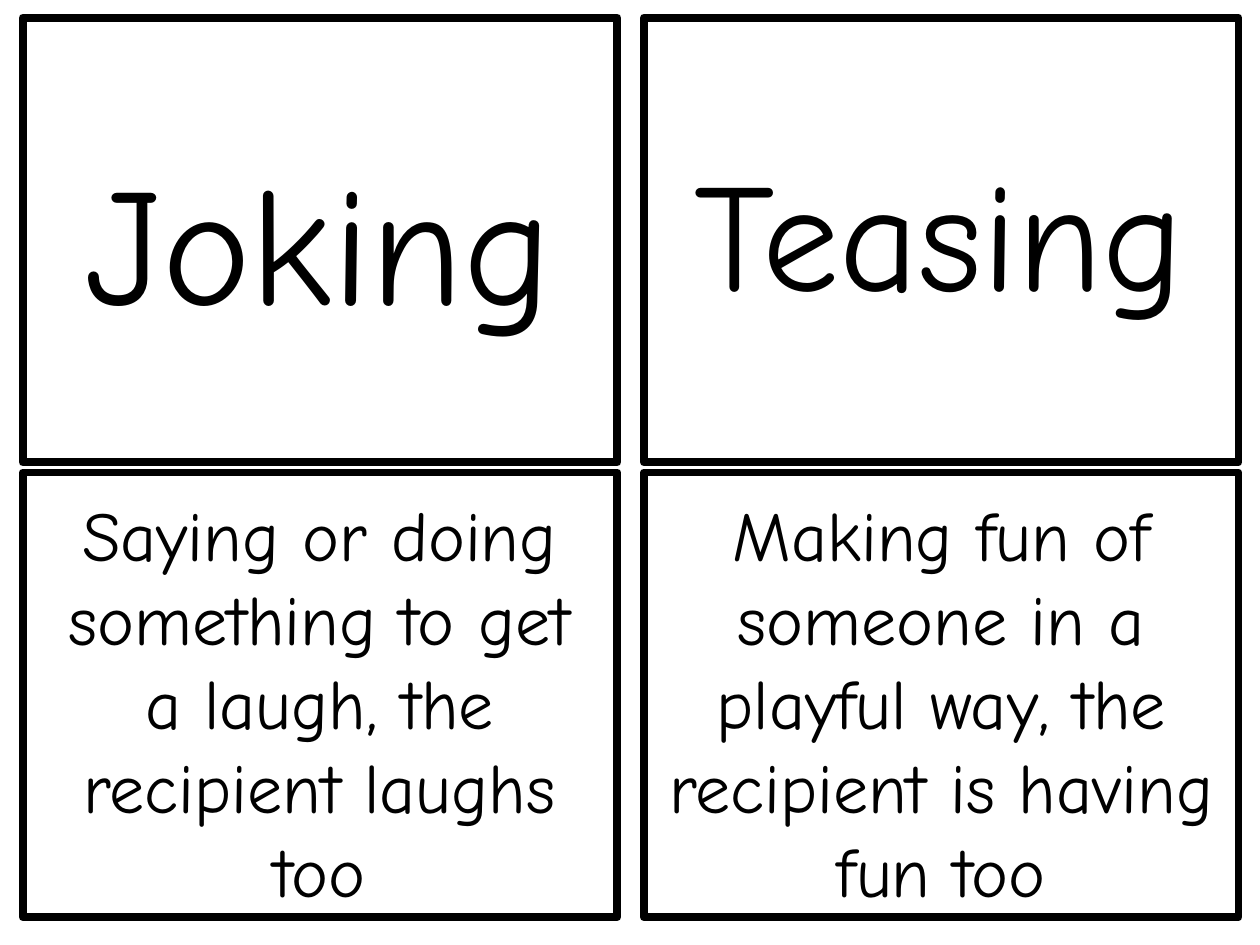
from dataclasses import dataclass

from pptx import Presentation
from pptx.dml.color import RGBColor
from pptx.enum.shapes import MSO_SHAPE
from pptx.enum.text import MSO_AUTO_SIZE, PP_ALIGN
from pptx.slide import Slide
from pptx.util import Inches, Pt

RECTANGLE = MSO_SHAPE.RECTANGLE
CENTER = PP_ALIGN.CENTER
FIT_SHAPE = MSO_AUTO_SIZE.SHAPE_TO_FIT_TEXT
BLANK_LAYOUT = 6


@dataclass(frozen=True)
class Theme:
    font: str = "Comic Neue"
    ink: RGBColor = RGBColor(0x00, 0x00, 0x00)
    paper: RGBColor = RGBColor(0xFF, 0xFF, 0xFF)
    border: float = 4.5
    term_size: int = 96
    long_term_size: int = 88
    meaning_size: int = 40


@dataclass(frozen=True)
class Area:
    left: float
    top: float
    width: float
    height: float


@dataclass(frozen=True)
class Label:
    text: str
    area: Area
    size: int


THEME = Theme()

# Card grid: terms on top, meanings below
CARD_WIDTH, CARD_HEIGHT = 4.72, 3.53
COLUMN_LEFTS = (0.18, 5.11)
ROW_TOPS = (0.14, 3.75)
TERM_TOP = 1.04
MEANING_TOP, MEANING_HEIGHT = 3.85, 3.47

LABELS = (
    Label("Joking", Area(0.31, TERM_TOP, 4.44, 1.72), THEME.term_size),
    Label("Teasing", Area(4.86, TERM_TOP, 5.19, 1.58), THEME.long_term_size),
    Label(
        "Making fun of someone in a playful way, the recipient is having fun too",
        Area(COLUMN_LEFTS[1], MEANING_TOP, CARD_WIDTH, MEANING_HEIGHT),
        THEME.meaning_size,
    ),
    Label(
        "Saying or doing something to get a laugh, the recipient laughs too",
        Area(0.35, MEANING_TOP, 4.37, MEANING_HEIGHT),
        THEME.meaning_size,
    ),
)


def to_lengths(area: Area) -> tuple[Inches, ...]:
    return tuple(Inches(n) for n in (area.left, area.top, area.width, area.height))


def draw_card(page: Slide, area: Area) -> None:
    card = page.shapes.add_shape(RECTANGLE, *to_lengths(area))
    card.shadow.inherit = False
    card.fill.solid()
    card.fill.fore_color.rgb = THEME.paper
    card.line.color.rgb = THEME.ink
    card.line.width = Pt(THEME.border)


def draw_text(page: Slide, text: str, *, area: Area, size: int,
              align: PP_ALIGN = CENTER, color: RGBColor = THEME.ink) -> None:
    box = page.shapes.add_textbox(*to_lengths(area))
    frame = box.text_frame
    frame.word_wrap = True
    frame.auto_size = FIT_SHAPE
    para = frame.paragraphs[0]
    para.alignment = align
    span = para.add_run()
    span.text = text
    span.font.name = THEME.font
    span.font.size = Pt(size)
    span.font.color.rgb = color


def main() -> None:
    deck = Presentation()
    deck.slide_width, deck.slide_height = Inches(10), Inches(7.5)
    page = deck.slides.add_slide(deck.slide_layouts[BLANK_LAYOUT])

    # Bordered cards
    for left in COLUMN_LEFTS:
        for top in ROW_TOPS:
            draw_card(page, Area(left, top, CARD_WIDTH, CARD_HEIGHT))

    # Terms and their meanings
    for label in LABELS:
        draw_text(page, label.text, area=label.area, size=label.size)

    deck.save("out.pptx")


if __name__ == "__main__":
    main()
